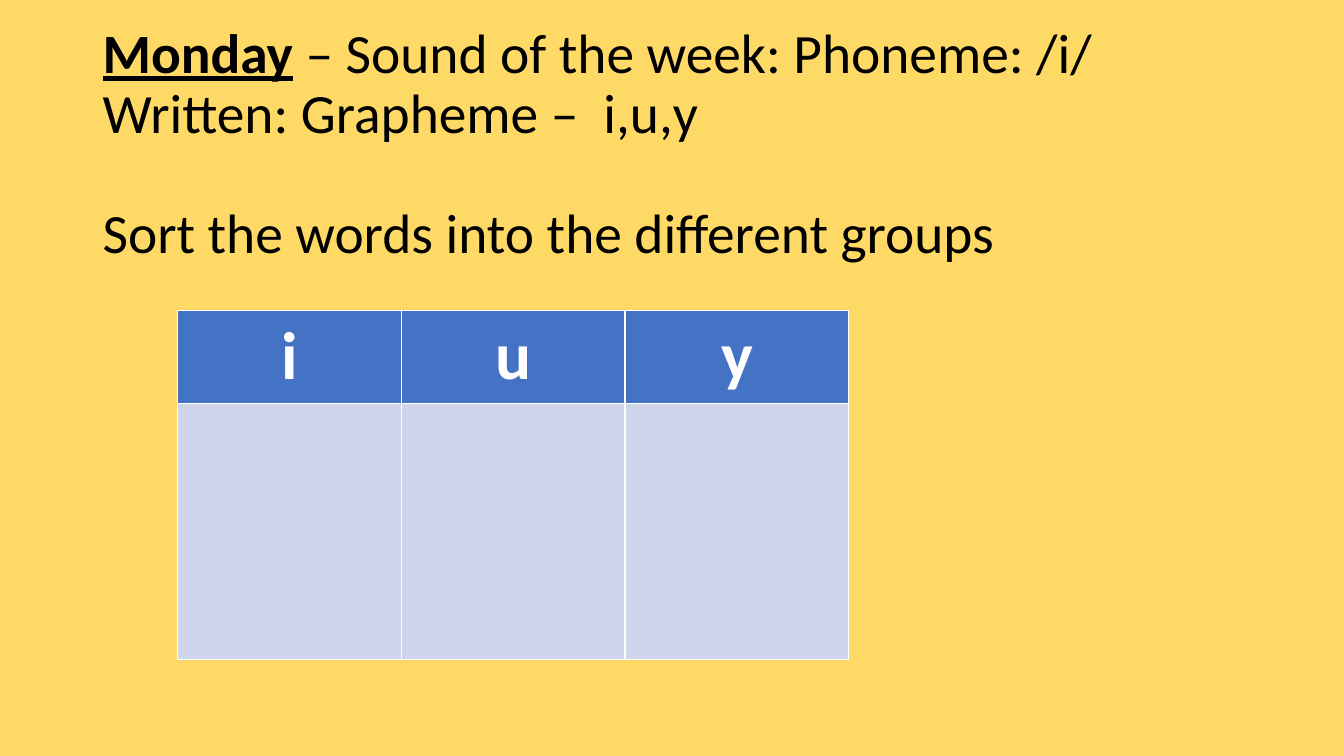
"""Build a phonics slide for sorting words by grapheme."""
from dataclasses import dataclass

from pptx import Presentation
from pptx.dml.color import RGBColor
from pptx.enum.text import MSO_ANCHOR, PP_ALIGN
from pptx.slide import Slide
from pptx.text.text import Font
from pptx.util import Inches, Pt

MIDDLE = MSO_ANCHOR.MIDDLE
CENTER = PP_ALIGN.CENTER


@dataclass(frozen=True)
class Theme:
    font: str = "Calibri"
    background: str = "FFD966"
    ink: str = "000000"
    header_text: str = "FFFFFF"
    header_fill: str = "4472C4"
    body_fill: str = "CFD5EA"
    instruction_size: float = 39.6
    grapheme_size: float = 48


@dataclass(frozen=True)
class Instruction:
    text: str
    day: str = ""
    space_before: float = 0


THEME = Theme()
INSTRUCTIONS = (
    Instruction(" – Sound of the week: Phoneme: /i/", day="Monday"),
    Instruction("Written: Grapheme –  i,u,y"),
    Instruction("Sort the words into the different groups", space_before=43.5),
)
GRAPHEMES = ("i", "u", "y")
COLUMN_WIDTH = 2.22
ROW_HEIGHTS = (0.92, 2.54)


def style_font(font: Font, size: float, color: str, bold: bool = False) -> None:
    font.name = THEME.font
    font.size = Pt(size)
    font.bold = bold
    font.color.rgb = RGBColor.from_string(color)


def add_instructions(slide: Slide) -> None:
    heading = slide.shapes.add_textbox(
        Inches(0.92), Inches(0.72), Inches(11.5), Inches(1.45)
    ).text_frame
    heading.word_wrap = True
    heading.vertical_anchor = MIDDLE
    for index, instruction in enumerate(INSTRUCTIONS):
        line = heading.add_paragraph() if index else heading.paragraphs[0]
        line.line_spacing = 0.9
        line.space_before = Pt(instruction.space_before)
        for words in filter(None, (instruction.day, instruction.text)):
            is_day = words == instruction.day
            run = line.add_run()
            run.text = words
            style_font(run.font, THEME.instruction_size, THEME.ink, bold=is_day)
            run.font.underline = is_day


def add_sorting_table(slide: Slide) -> None:
    sorting_table = slide.shapes.add_table(
        len(ROW_HEIGHTS), len(GRAPHEMES), Inches(1.76), Inches(3.08),
        Inches(COLUMN_WIDTH * len(GRAPHEMES)), Inches(sum(ROW_HEIGHTS)),
    ).table
    sorting_table.horz_banding = False
    for row, height in zip(sorting_table.rows, ROW_HEIGHTS):
        row.height = Inches(height)
    for column, grapheme in enumerate(GRAPHEMES):
        sorting_table.columns[column].width = Inches(COLUMN_WIDTH)
        for row, fill in enumerate((THEME.header_fill, THEME.body_fill)):
            cell = sorting_table.cell(row, column)
            cell.fill.solid()
            cell.fill.fore_color.rgb = RGBColor.from_string(fill)
        label = sorting_table.cell(0, column).text_frame.paragraphs[0]
        label.text = grapheme
        label.alignment = CENTER
        style_font(label.runs[0].font, THEME.grapheme_size, THEME.header_text, bold=True)


def main() -> None:
    presentation = Presentation()
    presentation.slide_width = Inches(13.33)
    presentation.slide_height = Inches(7.5)
    slide = presentation.slides.add_slide(presentation.slide_layouts[6])
    slide.background.fill.solid()
    slide.background.fill.fore_color.rgb = RGBColor.from_string(THEME.background)
    add_instructions(slide)
    add_sorting_table(slide)
    presentation.save("out.pptx")


if __name__ == "__main__":
    main()
